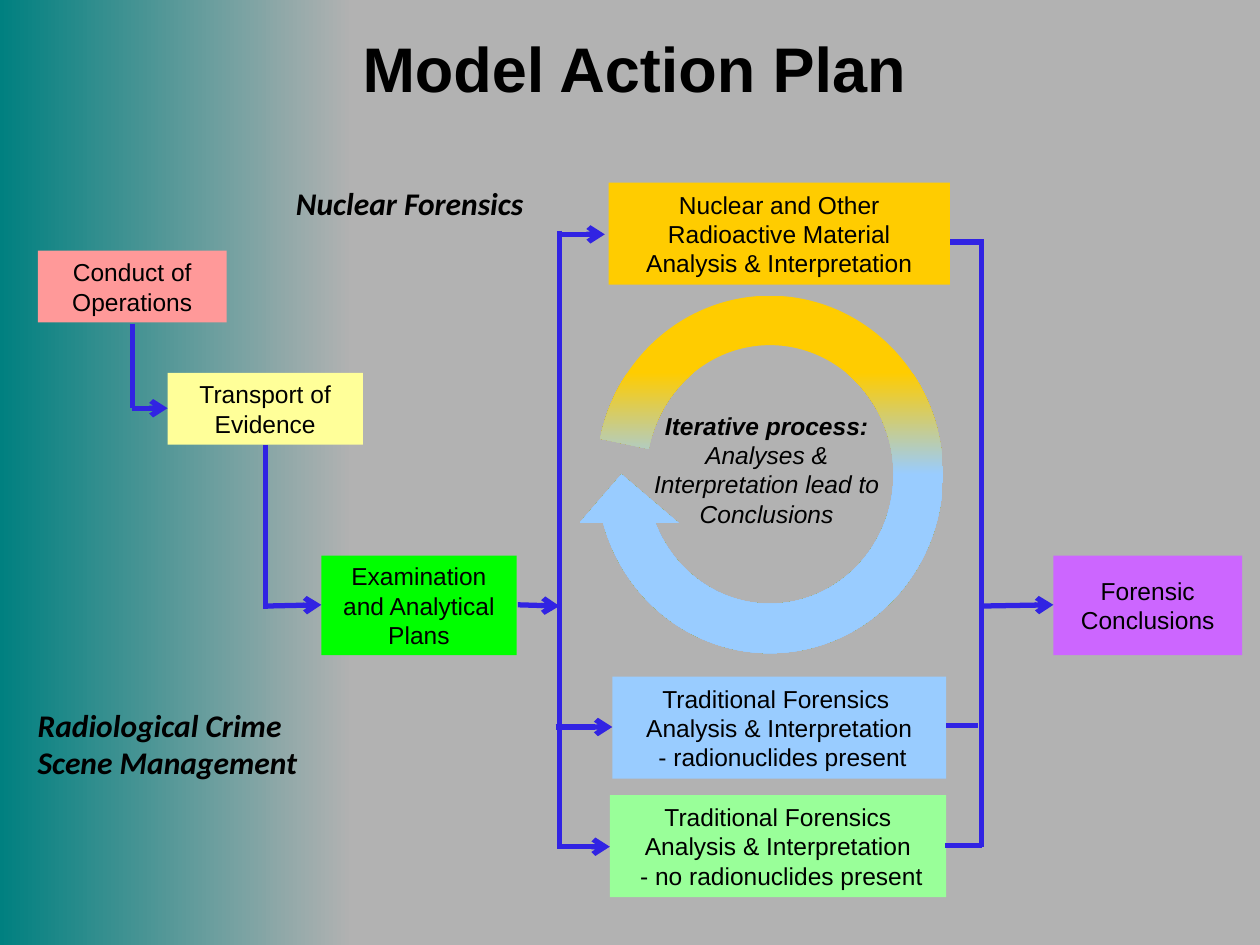
from lxml.etree import SubElement
from pptx import Presentation
from pptx.dml.color import RGBColor
from pptx.enum.shapes import MSO_CONNECTOR, MSO_SHAPE
from pptx.enum.text import MSO_ANCHOR, MSO_AUTO_SIZE, PP_ALIGN
from pptx.oxml import parse_xml
from pptx.oxml.ns import nsdecls, qn
from pptx.util import Inches, Pt

LINE = "3123E3"
TOP, MID = MSO_ANCHOR.TOP, MSO_ANCHOR.MIDDLE

# place, fill, anchor, paragraphs
BOXES = [
    ((0.3, 1.99, 1.5, 0.57), "FF9999", MID, ["Conduct of Operations"]),
    ((2.55, 4.41, 1.55, 0.79), "00FF00", MID, ["Examination and Analytical Plans"]),
    ((4.83, 1.45, 2.71, 0.81), "FFCC00", MID,
     ["Nuclear and Other Radioactive Material Analysis & Interpretation"]),
    ((4.86, 5.37, 2.65, 0.81), "99CCFF", MID,
     ["Traditional Forensics ", "Analysis & Interpretation", " - radionuclides present"]),
    ((8.36, 4.41, 1.5, 0.79), "CC66FF", MID, ["Forensic", "Conclusions"]),
    ((1.33, 2.96, 1.55, 0.57), "FFFF99", TOP, ["Transport of Evidence"]),
    ((4.84, 6.31, 2.67, 0.81), "99FF99", MID,
     ["Traditional Forensics Analysis & Interpretation", " - no radionuclides present"]),
]
LABELS = [
    ((2.25, 1.41, 2.15, 0.4), "Nuclear Forensics"),
    ((0.2, 5.55, 2.68, 0.71), "Radiological Crime Scene Management"),
]
CYCLE = [("Iterative process: ", True),
         ("Analyses & Interpretation lead to Conclusions", False)]
# x1, y1, x2, y2
PLAIN = [
    (4.44, 1.83, 4.44, 6.72), (7.79, 1.9, 7.79, 6.72), (7.51, 5.76, 7.76, 5.76),
    (7.5, 6.71, 7.79, 6.71), (1.05, 2.57, 1.05, 3.24), (2.11, 3.53, 2.11, 4.83),
    (7.54, 1.92, 7.79, 1.92),
]
ARROWS = [
    (4.11, 4.8, 4.44, 4.81), (4.42, 6.72, 4.84, 6.72), (4.41, 5.77, 4.86, 5.77),
    (4.45, 1.86, 4.8, 1.86), (7.79, 4.81, 8.36, 4.8), (1.05, 3.24, 1.33, 3.24),
    (2.11, 4.81, 2.55, 4.8),
]
BACK = [(0, "008080"), (28, "B2B2B2"), (100, "B2B2B2")]
RING = [(0, "FFCC00"), (25, "FFCC00"), (50, "99CCFF"), (100, "99CCFF")]


def color(code):
    return RGBColor.from_string(code)


def write(shape, paras, size=14, font="Arial", bold=False, italic=False,
          align=PP_ALIGN.CENTER, anchor=TOP):
    """Fill a shape with paragraphs, each a string or a list of (text, bold) runs."""
    frame = shape.text_frame
    frame.word_wrap = True
    frame.auto_size = MSO_AUTO_SIZE.NONE
    frame.vertical_anchor = anchor
    for i, runs in enumerate(paras):
        para = frame.add_paragraph() if i else frame.paragraphs[0]
        para.alignment = align
        for text, heavy in [(runs, bold)] if isinstance(runs, str) else runs:
            run = para.add_run()
            run.text = text
            run.font.size = Pt(size)
            run.font.name = font
            run.font.bold = heavy
            run.font.italic = italic
            run.font.color.rgb = color("000000")


def draw(slide, kind, place, fill=None):
    shape = slide.shapes.add_shape(kind, *map(Inches, place))
    shape.shadow.inherit = False
    shape.line.fill.background()
    if fill:
        shape.fill.solid()
        shape.fill.fore_color.rgb = color(fill)
    return shape


def blend(shape, stops, angle):
    """Give a shape a linear gradient; the angle runs clockwise."""
    marks = "".join(f'<a:gs pos="{pos * 1000}"><a:srgbClr val="{code}"/></a:gs>'
                    for pos, code in stops)
    grad = parse_xml(f'<a:gradFill {nsdecls("a")} rotWithShape="1"><a:gsLst>{marks}</a:gsLst>'
                     f'<a:lin ang="{angle * 60000}" scaled="0"/></a:gradFill>')
    shape._element.spPr.find(qn("a:prstGeom")).addnext(grad)


def link(slide, ends, head=False):
    line = slide.shapes.add_connector(MSO_CONNECTOR.STRAIGHT, *map(Inches, ends))
    line.line.color.rgb = color(LINE)
    line.line.width = Pt(3)
    if head:
        SubElement(line.line._get_or_add_ln(), qn("a:tailEnd"), type="arrow")
    SubElement(line._element.spPr, qn("a:effectLst"))


def main():
    deck = Presentation()
    deck.slide_width, deck.slide_height = Inches(10), Inches(7.5)
    slide = deck.slides.add_slide(deck.slide_layouts[5])

    back = draw(slide, MSO_SHAPE.RECTANGLE, (0, 0, 10, 7.5))
    blend(back, BACK, 0)
    title = slide.shapes.title
    back._element.addnext(title._element)
    title.left, title.top, title.width, title.height = map(Inches, (0.28, 0.12, 9.51, 0.83))
    write(title, ["Model Action Plan"], size=36, bold=True, anchor=MID)

    for place, fill, anchor, paras in BOXES:
        write(draw(slide, MSO_SHAPE.RECTANGLE, place, fill), paras, anchor=anchor)

    ring = draw(slide, MSO_SHAPE.CIRCULAR_ARROW, (4.54, 2.15, 3.14, 3.23))
    ring.rotation = 180
    for i, value in enumerate((0.125, 11.423, 204.577, 7.14, 0.125)):
        ring.adjustments[i] = value
    blend(ring, RING, 270)
    note = slide.shapes.add_textbox(*map(Inches, (5, 3.21, 2.17, 1.04)))
    write(note, [CYCLE], italic=True)

    for ends in PLAIN:
        link(slide, ends)
    for ends in ARROWS:
        link(slide, ends, head=True)

    for place, text in LABELS:
        write(slide.shapes.add_textbox(*map(Inches, place)), [text], size=18,
              font="Calibri", bold=True, italic=True, align=PP_ALIGN.LEFT)

    deck.save("out.pptx")


if __name__ == "__main__":
    main()
